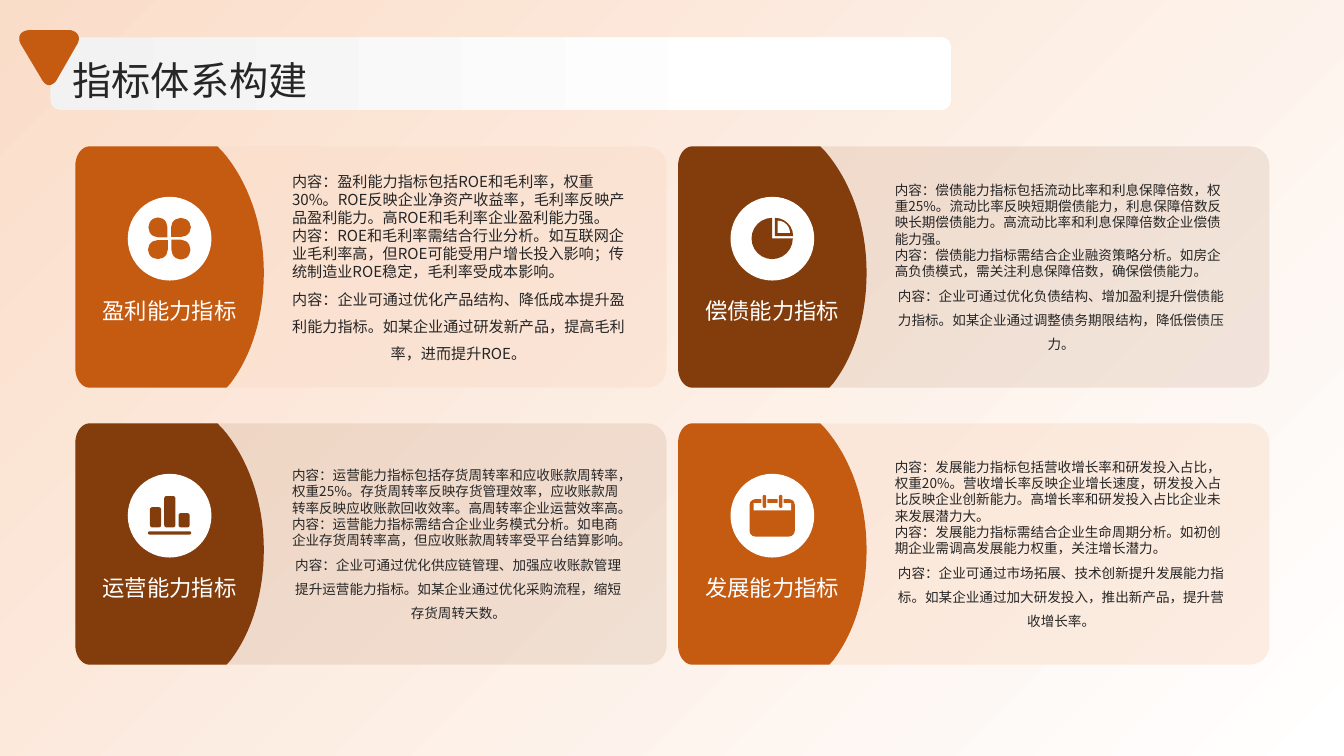
from dataclasses import dataclass

from lxml import etree
from pptx import Presentation
from pptx.dml.color import RGBColor
from pptx.enum.shapes import MSO_SHAPE
from pptx.enum.text import MSO_ANCHOR, PP_ALIGN
from pptx.oxml.ns import qn
from pptx.util import Cm, Pt

RECTANGLE = MSO_SHAPE.RECTANGLE
ROUNDED = MSO_SHAPE.ROUNDED_RECTANGLE
OVAL = MSO_SHAPE.OVAL
PIE = MSO_SHAPE.PIE
TEAR = MSO_SHAPE.TEAR
LEFT, CENTER = PP_ALIGN.LEFT, PP_ALIGN.CENTER
MIDDLE = MSO_ANCHOR.MIDDLE


@dataclass(frozen=True)
class Theme:
    font: str = "Noto Sans CJK SC"
    orange: str = "C55A11"
    brown: str = "833C0B"
    peach: str = "FADDC9"
    gray: str = "F2F2F2"
    white: str = "FFFFFF"
    ink: str = "262626"
    title_size: float = 28
    label_size: float = 16
    large_body: float = 10.8
    small_body: float = 9.7


theme = Theme()


def add_piece(kind, left, top, width, height, color, opacity=100):
    shape = slide.shapes.add_shape(kind, Cm(left), Cm(top), Cm(width), Cm(height))
    shape.shadow.inherit = False
    shape.line.fill.background()
    shape.fill.solid()
    shape.fill.fore_color.rgb = RGBColor.from_string(color)
    if opacity < 100:
        tint = next(shape.element.iter(qn("a:srgbClr")))
        etree.SubElement(tint, qn("a:alpha")).set("val", str(opacity * 1000))
    return shape


def add_outline(left, top, segments, color):
    points = [segments[0]]
    for segment in segments[1:]:
        if len(segment) == 2:
            points.append(segment)
            continue
        x0, y0 = points[-1]
        x1, y1, x2, y2, x3, y3 = segment
        for step in range(1, 17):
            t = step / 16
            a, b, c, d = (1 - t) ** 3, 3 * t * (1 - t) ** 2, 3 * t * t * (1 - t), t ** 3
            points.append((a * x0 + b * x1 + c * x2 + d * x3,
                           a * y0 + b * y1 + c * y2 + d * y3))
    places = [(Cm(left + x), Cm(top + y)) for x, y in points]
    builder = slide.shapes.build_freeform(*places[0])
    builder.add_line_segments(places[1:], close=True)
    shape = builder.convert_to_shape()
    shape.shadow.inherit = False
    shape.line.fill.background()
    shape.fill.solid()
    shape.fill.fore_color.rgb = RGBColor.from_string(color)


PANEL = [(0.36, 0), (3.58, 0), (3.71, 0.13), (4.34, 0.86, 4.75, 1.96, 4.75, 3.18),
         (4.75, 4.27, 4.45, 5.26, 3.91, 5.97), (3.81, 6.08), (0.36, 6.08),
         (0.16, 6.08, 0, 5.86, 0, 5.59), (0, 0.49), (0, 0.22, 0.16, 0, 0.36, 0)]
TRIANGLE = [(0.71, 0.76), (1.78, 0.76), (1.78, 0.76, 2.08, 0.81, 1.96, 1.09),
            (1.42, 2.03), (1.42, 2.03, 1.24, 2.29, 1.07, 2.03), (0.51, 1.09),
            (0.51, 1.09, 0.38, 0.81, 0.71, 0.76)]

QUARTER = [162, 0]
CLOVER = [(TEAR, 0.51 + 0.58 * column, 0.53 + 0.56 * row, 0.5, 0.48, turn, [], True)
          for column, row, turn in [(0, 0, 90), (1, 0, 180), (1, 1, 270), (0, 1, 0)]]
PIE_CHART = [(PIE, 0.53, 0.53, 1.04, 1.04, 0, [], True),
             (PIE, 0.66, 0.53, 0.92, 0.92, 0, QUARTER, True),
             (PIE, 0.88, 0.6, 0.62, 0.62, 0, QUARTER, False)]
BARS = [(ROUNDED, 0.56 + 0.36 * index, 1.35 - height, 0.28, height, 0, [0.2], True)
        for index, height in enumerate([0.51, 0.79, 0.36])]
BARS.append((ROUNDED, 0.51, 1.45, 1.09, 0.08, 0, [0.5], True))
CALENDAR = [(ROUNDED, 0.48, 0.64, 1.14, 0.94, 0, [0.15], True),
            (RECTANGLE, 0.58, 0.74, 0.95, 0.18, 0, [], False)]
for ring in (0.81, 1.22):
    CALENDAR.append((RECTANGLE, ring - 0.03, 0.62, 0.15, 0.14, 0, [], False))
    CALENDAR.append((ROUNDED, ring, 0.53, 0.09, 0.33, 0, [0.5], True))

cards = [
    ("盈利能力指标", theme.orange, theme.peach, 50, theme.large_body, CLOVER, [
        "内容：盈利能力指标包括ROE和毛利率，权重30%。ROE反映企业净资产收益率，毛利率反映产品盈利能力。高ROE和毛利率企业盈利能力强。",
        "内容：ROE和毛利率需结合行业分析。如互联网企业毛利率高，但ROE可能受用户增长投入影响；传统制造业ROE稳定，毛利率受成本影响。",
        "内容：企业可通过优化产品结构、降低成本提升盈利能力指标。如某企业通过研发新产品，提高毛利率，进而提升ROE。"]),
    ("偿债能力指标", theme.brown, theme.brown, 10, theme.small_body, PIE_CHART, [
        "内容：偿债能力指标包括流动比率和利息保障倍数，权重25%。流动比率反映短期偿债能力，利息保障倍数反映长期偿债能力。高流动比率和利息保障倍数企业偿债能力强。",
        "内容：偿债能力指标需结合企业融资策略分析。如房企高负债模式，需关注利息保障倍数，确保偿债能力。",
        "内容：企业可通过优化负债结构、增加盈利提升偿债能力指标。如某企业通过调整债务期限结构，降低偿债压力。"]),
    ("运营能力指标", theme.brown, theme.brown, 10, theme.small_body, BARS, [
        "内容：运营能力指标包括存货周转率和应收账款周转率，权重25%。存货周转率反映存货管理效率，应收账款周转率反映应收账款回收效率。高周转率企业运营效率高。",
        "内容：运营能力指标需结合企业业务模式分析。如电商企业存货周转率高，但应收账款周转率受平台结算影响。",
        "内容：企业可通过优化供应链管理、加强应收账款管理提升运营能力指标。如某企业通过优化采购流程，缩短存货周转天数。"]),
    ("发展能力指标", theme.orange, theme.peach, 50, theme.small_body, CALENDAR, [
        "内容：发展能力指标包括营收增长率和研发投入占比，权重20%。营收增长率反映企业增长速度，研发投入占比反映企业创新能力。高增长率和研发投入占比企业未来发展潜力大。",
        "内容：发展能力指标需结合企业生命周期分析。如初创期企业需调高发展能力权重，关注增长潜力。",
        "内容：企业可通过市场拓展、技术创新提升发展能力指标。如某企业通过加大研发投入，推出新产品，提升营收增长率。"]),
]

presentation = Presentation()
presentation.slide_width, presentation.slide_height = Cm(33.87), Cm(19.05)
slide = presentation.slides.add_slide(presentation.slide_layouts[5])
title = slide.shapes.title
styles = []

backdrop = add_piece(RECTANGLE, 0, 0, 33.87, 19.05, theme.white)

for index, (name, color, tint, opacity, body_size, icon, contents) in enumerate(cards):
    left = 1.9 + 15.19 * (index % 2)
    top = 3.69 + 6.98 * (index // 2)
    card = add_piece(ROUNDED, left, top, 14.9, 6.08, tint, opacity)
    card.adjustments[0] = 0.08
    add_outline(left, top, PANEL, color)

    body = slide.shapes.add_textbox(Cm(left + 5.21), Cm(top + 0.38), Cm(8.89), Cm(5.33))
    body.text_frame.word_wrap = True
    body.text_frame.vertical_anchor = MIDDLE
    body.text_frame.text = "\n".join(contents)
    for paragraph, alignment, spacing in zip(
            body.text_frame.paragraphs, (LEFT, LEFT, CENTER), (1.0, 1.0, 1.5)):
        styles.append((paragraph, body_size, theme.ink, alignment, spacing))

    label = slide.shapes.add_textbox(Cm(left + 0.28), Cm(top + 3.68), Cm(4.19), Cm(1.12))
    label.text_frame.word_wrap = True
    label.text_frame.text = name
    styles.append((label.text_frame.paragraphs[0], theme.label_size, theme.white, CENTER, 1.0))

    icon_left, icon_top = left + 1.32, top + 1.27
    add_piece(OVAL, icon_left, icon_top, 2.11, 2.11, theme.white)
    for kind, x, y, width, height, turn, adjustments, colored in icon:
        piece = add_piece(kind, icon_left + x, icon_top + y, width, height,
                          color if colored else theme.white)
        piece.rotation = turn
        for position, value in enumerate(adjustments):
            piece.adjustments[position] = value

title_bar = add_piece(ROUNDED, 1.27, 0.94, 22.7, 1.83, theme.gray)
title_bar.adjustments[0] = 0.14
title_bar.element.addnext(title.element)
add_outline(0, 0, TRIANGLE, theme.orange)

for shape, angle, start, end, limit in (
        (backdrop, 135, theme.white, theme.peach, 1),
        (title_bar, 0, theme.gray, theme.white, 0.8)):
    shape.fill.gradient()
    shape.fill.gradient_angle = angle
    for stop, color, position in zip(shape.fill.gradient_stops, (start, end), (0, limit)):
        stop.color.rgb = RGBColor.from_string(color)
        stop.position = position

title.left, title.top, title.width, title.height = Cm(1.83), Cm(1.3), Cm(29.64), Cm(1.3)
frame = title.text_frame
frame.margin_left = frame.margin_right = frame.margin_top = frame.margin_bottom = 0
frame.vertical_anchor = MIDDLE
frame.text = "指标体系构建"
styles.append((frame.paragraphs[0], theme.title_size, theme.ink, LEFT, 1.1))

for paragraph, size, color, alignment, spacing in styles:
    paragraph.alignment = alignment
    paragraph.line_spacing = spacing
    paragraph.font.size = Pt(size)
    paragraph.font.name = theme.font
    paragraph.font.color.rgb = RGBColor.from_string(color)

presentation.save("out.pptx")
